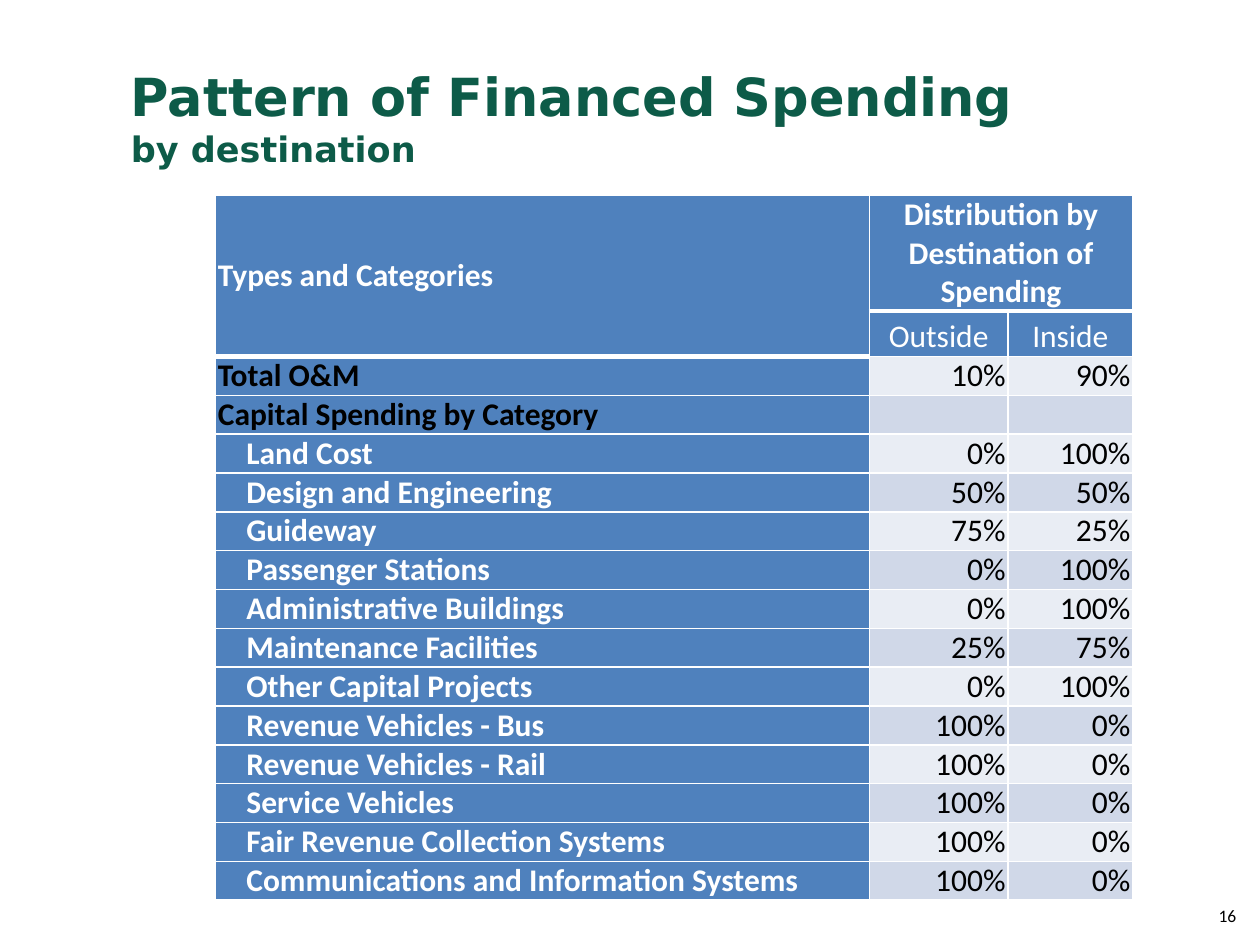
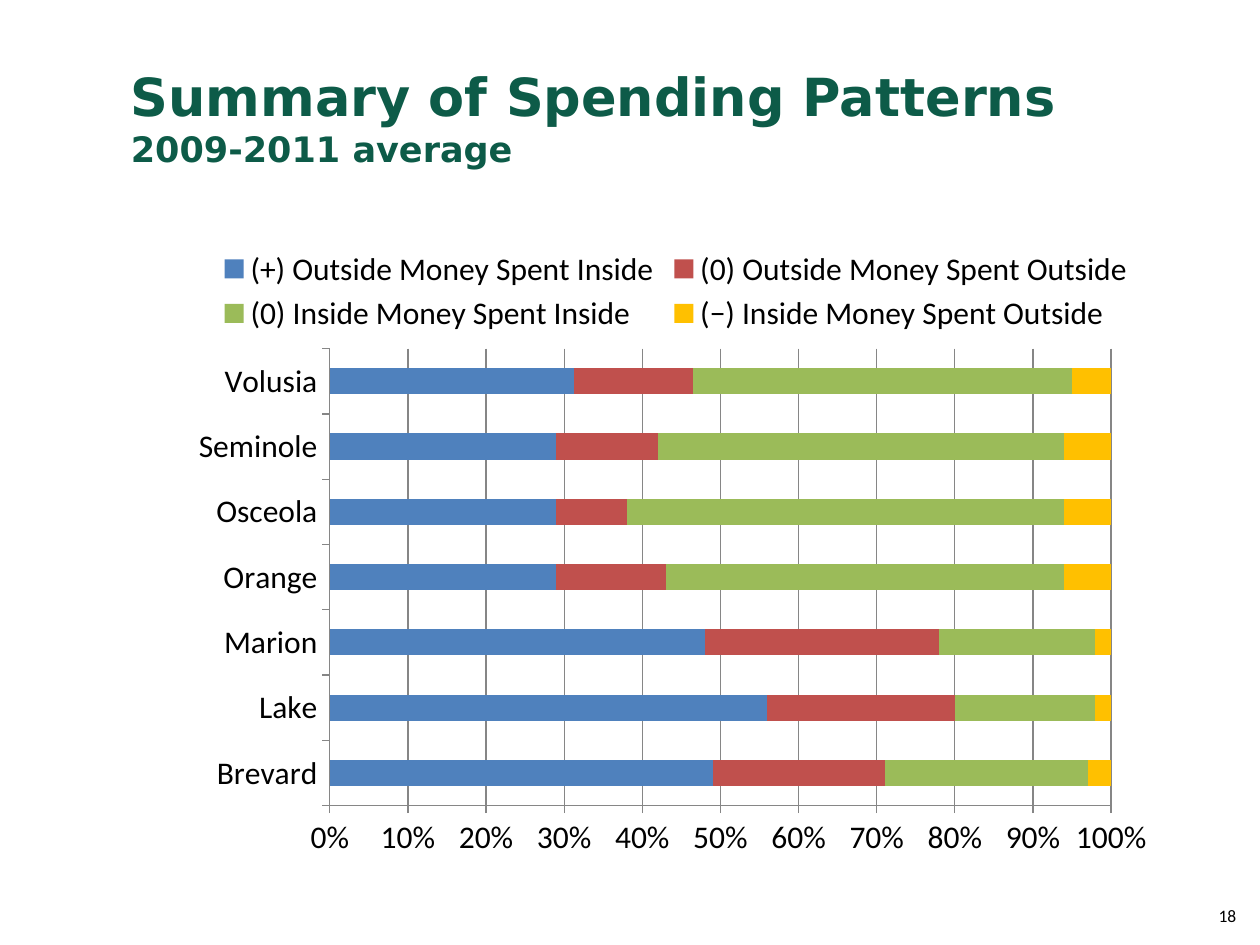
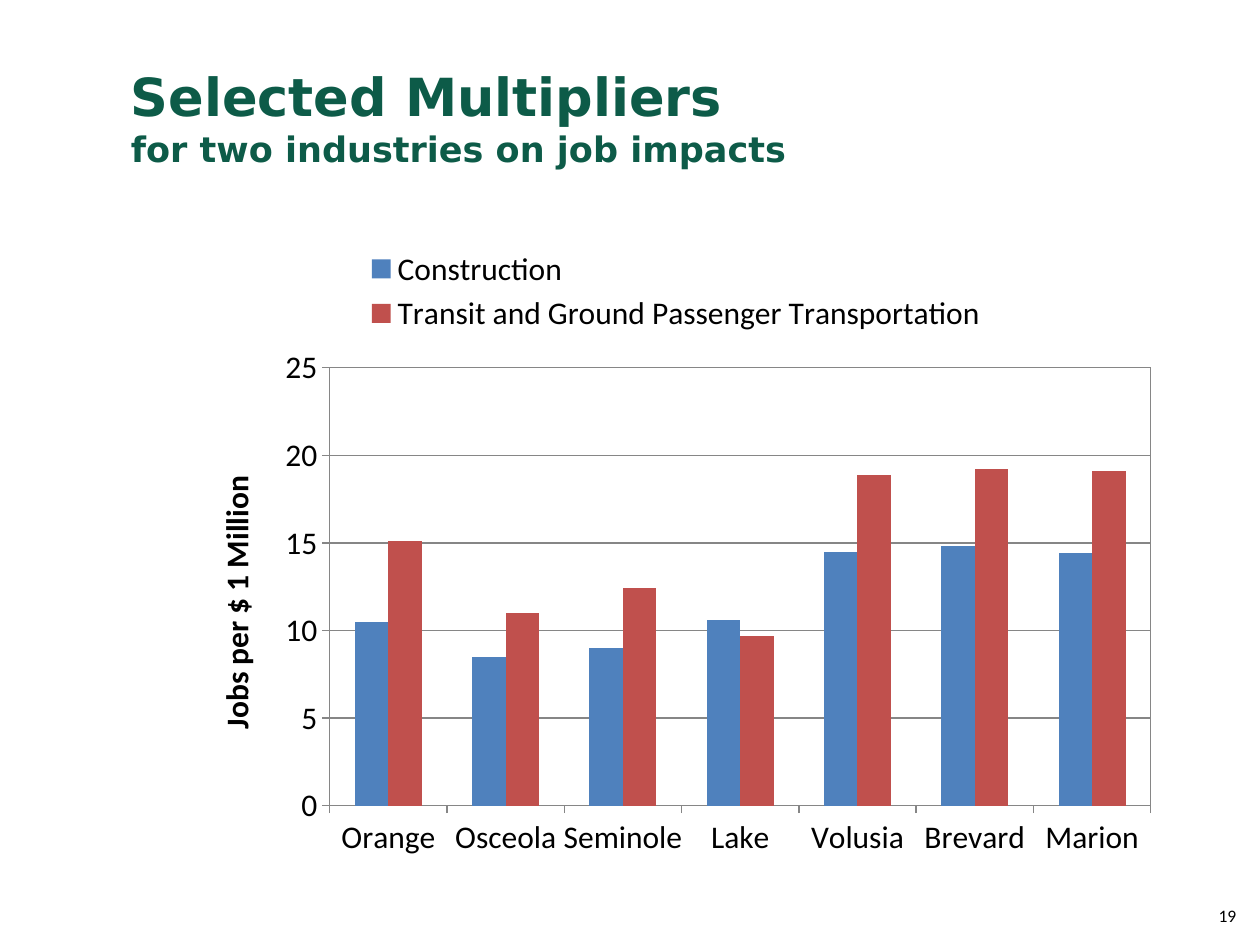
from dataclasses import dataclass

from lxml import etree
from pptx import Presentation
from pptx import util as u
from pptx.chart.data import CategoryChartData
from pptx.dml.color import RGBColor
from pptx.enum import chart as ch
from pptx.enum import text
from pptx.oxml import parse_xml
from pptx.oxml.ns import nsdecls, qn

Pt = u.Pt


@dataclass(frozen=True)
class Theme:
    """Colours, fonts and type sizes shared by the slides."""
    green: str = "0D5B48"
    blue: str = "4F81BD"
    red: str = "C0504D"
    lime: str = "9BBB59"
    amber: str = "FFC000"
    pale: str = "E9EDF4"
    mist: str = "D0D8E8"
    grey: str = "868686"
    white: str = "FFFFFF"
    black: str = "000000"
    heading_font: str = "DejaVu Sans"
    body_font: str = "Calibri"
    title_size: int = 30
    subtitle_size: int = 20
    body_size: int = 18
    number_size: int = 10


THEME = Theme()

SPENDING = [
    ("Total O&M", "10%", "90%"),
    ("Capital Spending by Category", "", ""),
    ("Land Cost", "0%", "100%"),
    ("Design and Engineering", "50%", "50%"),
    ("Guideway", "75%", "25%"),
    ("Passenger Stations", "0%", "100%"),
    ("Administrative Buildings", "0%", "100%"),
    ("Maintenance Facilities", "25%", "75%"),
    ("Other Capital Projects", "0%", "100%"),
    ("Revenue Vehicles - Bus", "100%", "0%"),
    ("Revenue Vehicles - Rail", "100%", "0%"),
    ("Service Vehicles", "100%", "0%"),
    ("Fair Revenue Collection Systems", "100%", "0%"),
    ("Communications and Information Systems", "100%", "0%"),
]
GROUP_ROWS = 2

PATTERN_COUNTIES = ["Brevard", "Lake", "Marion", "Orange", "Osceola", "Seminole", "Volusia"]
PATTERNS = [
    ("(+) Outside Money Spent Inside", THEME.blue, [49, 56, 48, 29, 29, 29, 31]),
    ("(0) Outside Money Spent Outside", THEME.red, [22, 24, 30, 14, 9, 13, 15]),
    ("(0) Inside Money Spent Inside", THEME.lime, [26, 18, 20, 51, 56, 52, 48]),
    ("(−) Inside Money Spent Outside", THEME.amber, [3, 2, 2, 6, 6, 6, 5]),
]

JOB_COUNTIES = ["Orange", "Osceola", "Seminole", "Lake", "Volusia", "Brevard", "Marion"]
JOBS = [
    ("Construction", THEME.blue, [10.5, 8.5, 9, 10.6, 14.5, 14.8, 14.4]),
    ("Transit and Ground Passenger Transportation", THEME.red,
     [15.1, 11, 12.4, 9.7, 18.9, 19.2, 19.1]),
]


def style_font(font, size, color, bold=False, face=THEME.body_font):
    """Set the size, colour, weight and face of a font."""
    font.size, font.bold, font.name = Pt(size), bold, face
    font.color.rgb = RGBColor.from_string(color)


def add_run(paragraph, words, *style, **options):
    """Append one styled run to a paragraph."""
    run = paragraph.add_run()
    run.text = words
    style_font(run.font, *style, **options)


def add_text_area(slide, left, top, width, height):
    """Add a wrapping, vertically centred text area and return its paragraph."""
    frame = slide.shapes.add_textbox(Pt(left), Pt(top), Pt(width), Pt(height)).text_frame
    frame.word_wrap = True
    frame.vertical_anchor = text.MSO_ANCHOR.MIDDLE
    return frame.paragraphs[0]


def add_page(deck, title, subtitle, number):
    """Add a slide with its two-line heading and page number."""
    slide = deck.slides.add_slide(deck.slide_layouts[6])
    folio = add_text_area(slide, 650, 509, 63.5, 28.8)
    folio.alignment = text.PP_ALIGN.RIGHT
    add_run(folio, str(number), THEME.number_size, THEME.black)
    heading = add_text_area(slide, 67.7, 21.6, 616.3, 90)
    face = THEME.heading_font
    add_run(heading, title, THEME.title_size, THEME.green, True, face=face)
    heading.add_line_break()
    add_run(heading, subtitle, THEME.subtitle_size, THEME.green, True, face=face)
    return slide


def rule_cell(cell, bottom):
    """Draw white borders around a cell, with the given width below it."""
    properties = cell._tc.get_or_add_tcPr()
    for side, width in (("L", 1), ("R", 1), ("T", 1), ("B", bottom)):
        properties.append(parse_xml(
            f'<a:ln{side} {nsdecls("a")} w="{Pt(width)}"><a:solidFill>'
            f'<a:srgbClr val="{THEME.white}"/></a:solidFill></a:ln{side}>'))


def fill_cell(cell, words, fill, color, align, bold=False, indent=0, bottom=1,
              anchor=text.MSO_ANCHOR.MIDDLE):
    """Write and style one table cell."""
    rule_cell(cell, bottom)
    cell.fill.solid()
    cell.fill.fore_color.rgb = RGBColor.from_string(fill)
    cell.margin_left, cell.margin_right = Pt(1.4 + indent), Pt(1.4)
    cell.margin_top = cell.margin_bottom = 0
    cell.vertical_anchor = anchor
    paragraph = cell.text_frame.paragraphs[0]
    paragraph.alignment = align
    if words:
        add_run(paragraph, words, THEME.body_size, color, bold)
    else:
        style_font(paragraph.font, THEME.body_size, color)


def add_spending_table(slide):
    """Add the table of spending shares by destination."""
    widths = [373.7, 79.2, 71.3]
    heights = [66.2, 25.9] + [22.2] * len(SPENDING)
    table = slide.shapes.add_table(len(heights), len(widths), Pt(123.1), Pt(111.6),
                                   Pt(sum(widths)), Pt(sum(heights))).table
    for column, width in zip(table.columns, widths):
        column.width = Pt(width)
    for row, height in zip(table.rows, heights):
        row.height = Pt(height)

    align = text.PP_ALIGN
    headers = [("Types and Categories", "Distribution by Destination of Spending", ""),
               ("", "Outside", "Inside")]
    for r, labels in enumerate(headers):
        for c, label in enumerate(labels):
            fill_cell(table.cell(r, c), label, THEME.blue, THEME.white,
                      align.CENTER if c else align.LEFT, bold=r == 0,
                      bottom=3 if r == 0 or c == 0 else 1,
                      anchor=text.MSO_ANCHOR.BOTTOM if r else text.MSO_ANCHOR.MIDDLE)
    table.cell(0, 0).merge(table.cell(1, 0))
    table.cell(0, 1).merge(table.cell(0, 2))

    for i, (category, *shares) in enumerate(SPENDING):
        row = i + len(headers)
        is_group = i < GROUP_ROWS
        fill_cell(table.cell(row, 0), category, THEME.blue,
                  THEME.black if is_group else THEME.white, align.LEFT, True,
                  indent=0 if is_group else 16.3)
        for c, share in enumerate(shares, 1):
            fill_cell(table.cell(row, c), share, THEME.mist if i % 2 else THEME.pale,
                      THEME.black, align.RIGHT)


def rule_line(line):
    """Give a chart line the thin grey rule."""
    line.color.rgb = RGBColor.from_string(THEME.grey)
    line.width = Pt(0.75)


def place_plot(chart, x, y, w, h, framed):
    """Fix the inner plot area as fractions of the chart and frame it if asked."""
    plot_area = chart._chartSpace.find(".//" + qn("c:plotArea"))
    for layout in plot_area.findall(qn("c:layout")):
        plot_area.remove(layout)
    layout = etree.Element(qn("c:layout"))
    manual = etree.SubElement(layout, qn("c:manualLayout"))
    settings = {"layoutTarget": "inner", "xMode": "edge", "yMode": "edge",
                "x": x, "y": y, "w": w, "h": h}
    for tag, value in settings.items():
        etree.SubElement(manual, qn("c:" + tag)).set("val", str(value))
    plot_area.insert(0, layout)
    if framed:
        plot_area.append(parse_xml(
            f'<c:spPr {nsdecls("c", "a")}><a:noFill/><a:ln w="{Pt(0.75)}"><a:solidFill>'
            f'<a:srgbClr val="{THEME.grey}"/></a:solidFill></a:ln></c:spPr>'))


def add_county_chart(slide, kind, counties, measures, number_format, plot_box, framed=False):
    """Add a bar chart by county with a legend on top and return it."""
    data = CategoryChartData()
    data.categories = counties
    for name, _, values in measures:
        data.add_series(name, values)
    chart = slide.shapes.add_chart(kind, Pt(103.7), Pt(133.9), Pt(565.2), Pt(362.9), data).chart
    style_font(chart.font, THEME.body_size, THEME.black)
    chart.has_title = False
    chart.has_legend = True
    chart.legend.position = ch.XL_LEGEND_POSITION.TOP
    chart.legend.include_in_layout = False

    bars = chart.plots[0]
    bars.vary_by_categories = False
    bars.gap_width = 150
    for series, (_, color, _) in zip(bars.series, measures):
        series.format.fill.solid()
        series.format.fill.fore_color.rgb = RGBColor.from_string(color)

    for axis in (chart.category_axis, chart.value_axis):
        axis.major_tick_mark = ch.XL_TICK_MARK.OUTSIDE
        axis.minor_tick_mark = ch.XL_TICK_MARK.NONE
        rule_line(axis.format.line)
    chart.category_axis.has_major_gridlines = False
    chart.value_axis.has_major_gridlines = True
    rule_line(chart.value_axis.major_gridlines.format.line)
    labels = chart.value_axis.tick_labels
    labels.number_format, labels.number_format_is_linked = number_format, False
    place_plot(chart, *plot_box, framed)
    return chart


def main():
    """Build the three slides and save the deck."""
    deck = Presentation()
    deck.slide_width, deck.slide_height = Pt(720), Pt(540)

    destinations = add_page(deck, "Pattern of Financed Spending", "by destination", 16)
    add_spending_table(destinations)

    summary = add_page(deck, "Summary of Spending Patterns", "2009-2011 average", 18)
    patterns = add_county_chart(summary, ch.XL_CHART_TYPE.BAR_STACKED_100, PATTERN_COUNTIES,
                                PATTERNS, "0%", (0.15, 0.18, 0.79, 0.72))
    patterns.plots[0].overlap = 100

    multipliers = add_page(deck, "Selected Multipliers", "for two industries on job impacts", 19)
    jobs = add_county_chart(multipliers, ch.XL_CHART_TYPE.COLUMN_CLUSTERED, JOB_COUNTIES,
                            JOBS, "General", (0.15, 0.21, 0.83, 0.69), framed=True)
    jobs.value_axis.minimum_scale, jobs.value_axis.maximum_scale = 0, 25
    jobs.value_axis.major_unit = 5
    axis_title = jobs.value_axis.axis_title.text_frame.paragraphs[0]
    add_run(axis_title, "Jobs per $ 1 Million", THEME.body_size, THEME.black, True)

    deck.save("out.pptx")


if __name__ == "__main__":
    main()
